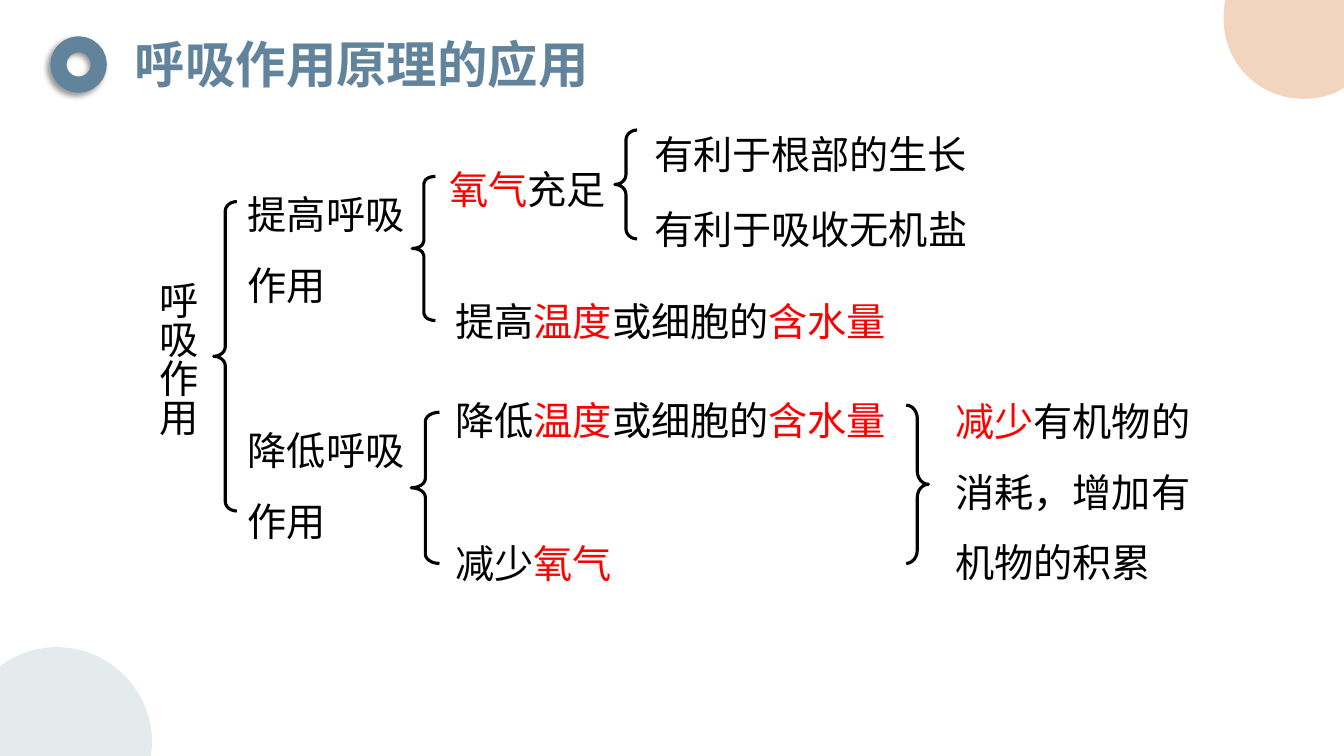
from lxml import etree
from pptx import Presentation
from pptx.dml.color import RGBColor
from pptx.enum.shapes import MSO_SHAPE
from pptx.enum.text import MSO_AUTO_SIZE
from pptx.oxml import parse_xml
from pptx.oxml.ns import qn
from pptx.util import Inches, Pt

OVAL = MSO_SHAPE.OVAL
LEFT = MSO_SHAPE.LEFT_BRACE
RIGHT = MSO_SHAPE.RIGHT_BRACE
GROW = MSO_AUTO_SIZE.SHAPE_TO_FIT_TEXT
BLACK = RGBColor(0, 0, 0)
RED = RGBColor(0xFF, 0, 0)
BLUE = RGBColor(0x62, 0x83, 0x9C)
PEACH = RGBColor(0xF3, 0xD4, 0xBF)
MIST = RGBColor(0xE4, 0xEB, 0xED)
SERIF, SANS = "Times New Roman", "Noto Sans CJK SC"
WIDTH, HEIGHT = 40 / 3, 7.5
SHADOW = (
    '<a:effectLst xmlns:a="http://schemas.openxmlformats.org/drawingml/2006/main">'
    '<a:outerShdw blurRad="50800" dist="38100" dir="8100000" rotWithShape="0">'
    '<a:srgbClr val="000000"><a:alpha val="40000"/></a:srgbClr>'
    '</a:outerShdw></a:effectLst>'
)


def add_corner(slide, edges, curves, color):
    """Add a corner disc: straight edges first, then Bezier curves."""
    points = [(Inches(x), Inches(y)) for x, y in edges + curves]
    outline = slide.shapes.build_freeform(*points[0])
    outline.add_line_segments(points[1:], close=True)
    disc = outline.convert_to_shape()
    disc.shadow.inherit = False
    disc.fill.solid()
    disc.fill.fore_color.rgb = color
    disc.line.fill.background()
    lines = list(disc._element.iter(qn("a:lnTo")))[len(edges) - 1:]
    for start in range(0, len(curves), 3):
        curve = etree.Element(qn("a:cubicBezTo"))
        lines[start].addprevious(curve)
        for line in lines[start:start + 3]:
            curve.append(line[0])
            line.getparent().remove(line)


def add_line_shape(slide, kind, box, color, weight):
    """Add an unfilled preset shape with a plain outline."""
    shape = slide.shapes.add_shape(kind, *map(Inches, box))
    shape.shadow.inherit = False
    shape.fill.background()
    shape.line.color.rgb = color
    shape.line.width = Pt(weight)
    return shape


def add_ring(slide):
    """Add the shadowed ring beside the title."""
    ring = add_line_shape(slide, OVAL, (0.58, 0.44, 0.4, 0.4), BLUE, 11.5)
    ring.rotation = 119.1
    props = ring._element.spPr
    props.replace(props.find(qn("a:effectLst")), parse_xml(SHADOW))


def add_brace(slide, kind, box, bend):
    """Add a black brace with the given curl."""
    brace = add_line_shape(slide, kind, box, BLACK, 2.25)
    brace.adjustments[0] = bend


def add_text(slide, box, parts, size=28, face=SERIF, bold=False, space=1.5):
    """Add a wrapped text box made of coloured parts."""
    frame = slide.shapes.add_textbox(*map(Inches, box)).text_frame
    frame.word_wrap = True
    frame.auto_size = GROW
    para = frame.paragraphs[0]
    para.line_spacing = space
    para.font.size = Pt(size)
    para.font.bold = bold
    para.font.name = face
    base = para._p.pPr.find(qn("a:defRPr"))
    etree.SubElement(base, qn("a:ea")).set("typeface", SANS)
    for words, color in parts:
        run = para.add_run()
        run.text = words
        run.font.color.rgb = color
    return frame


def main():
    """Build the slide and save it."""
    deck = Presentation()
    deck.slide_width, deck.slide_height = Inches(WIDTH), Inches(HEIGHT)
    slide = deck.slides.add_slide(deck.slide_layouts[6])
    add_ring(slide)
    add_corner(
        slide,
        [(12.16, 0), (WIDTH, 0), (WIDTH, 0.87), (13.25, 0.92)],
        [(13.15, 0.96), (13.04, 0.98), (12.93, 0.98),
         (12.49, 0.98), (12.14, 0.63), (12.14, 0.19),
         (12.14, 0.13), (12.14, 0.08), (12.15, 0.03)],
        PEACH,
    )
    add_corner(
        slide,
        [(1.51, 7.37), (1.5, HEIGHT), (0, HEIGHT), (0, 6.61), (0.04, 6.58)],
        [(0.19, 6.48), (0.37, 6.42), (0.56, 6.42),
         (1.09, 6.42), (1.51, 6.85), (1.51, 7.37)],
        MIST,
    )

    climate = [("温度", RED), ("或细胞的", BLACK), ("含水量", RED)]
    labels = [
        ((2.36, 1.61, 1.84, 1.43), [("提高呼吸作用", BLACK)]),
        ((4.36, 1.36, 1.92, 0.72), [("氧气", RED), ("充足", BLACK)]),
        ((6.39, 1.01, 3.36, 0.72), [("有利于根部的生长", BLACK)]),
        ((2.36, 3.95, 1.78, 1.43), [("降低呼吸作用", BLACK)]),
        ((4.42, 2.67, 4.96, 0.72), [("提高", BLACK)] + climate),
        ((6.39, 1.75, 3.48, 0.72), [("有利于吸收无机盐", BLACK)]),
        ((4.42, 3.65, 4.57, 0.72), [("降低", BLACK)] + climate),
        ((4.42, 5.07, 2.03, 0.72), [("减少", BLACK), ("氧气", RED)]),
        ((9.38, 3.66, 2.54, 2.13),
         [("减少", RED), ("有机物的消耗，增加有机物的积累", BLACK)]),
    ]
    for box, parts in labels:
        add_text(slide, box, parts)
    root = add_text(slide, (1.46, 2.69, 0.82, 1.76), [("呼吸作用", BLACK)])
    root._txBody.bodyPr.set("vert", "eaVert")

    braces = [
        (LEFT, (2.12, 2, 0.23, 3.07), 0.41),
        (LEFT, (4.09, 1.75, 0.23, 1.43), 0.31),
        (LEFT, (6.1, 1.29, 0.22, 1.08), 0.45),
        (LEFT, (4.08, 4.09, 0.28, 1.5), 0.33),
        (RIGHT, (8.99, 4.02, 0.22, 1.57), 0.6),
    ]
    for kind, box, bend in braces:
        add_brace(slide, kind, box, bend)
    add_text(slide, (1.24, 0.28, 9.68, 0.71), [("呼吸作用原理的应用", BLUE)],
             36, SANS, True, 1)
    deck.save("out.pptx")


if __name__ == "__main__":
    main()
